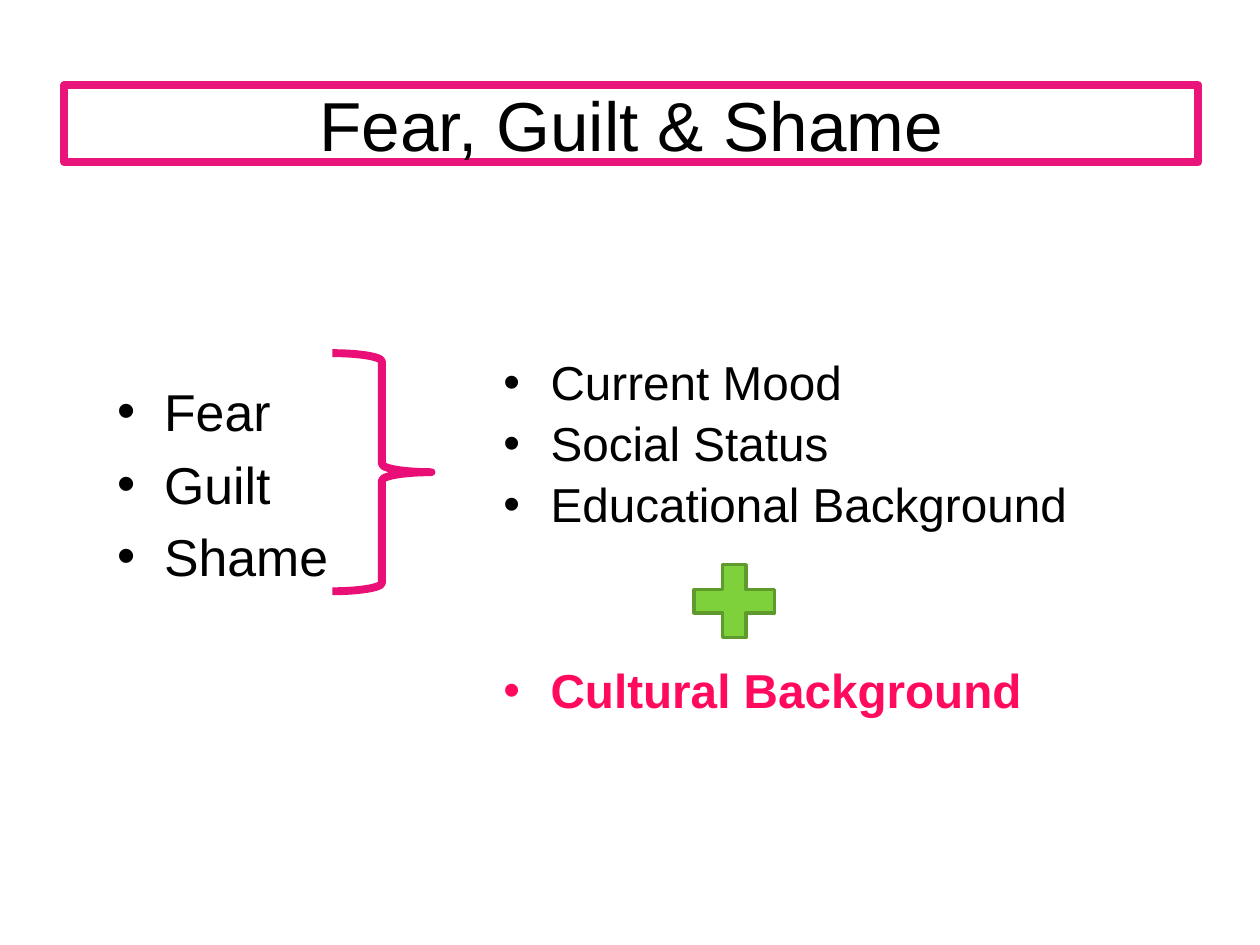
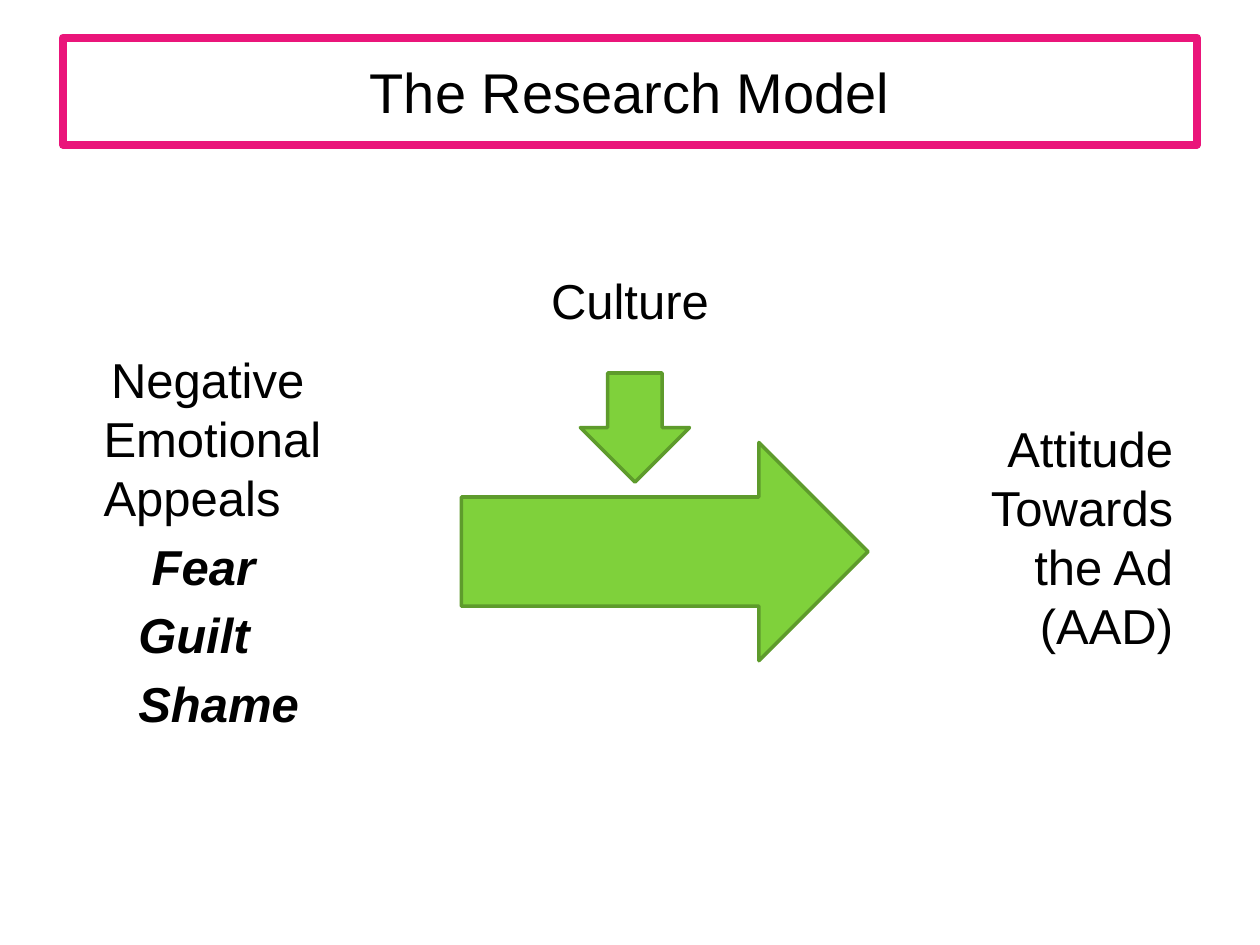
import pptx
import pptx.dml.color
import pptx.enum.shapes
import pptx.enum.text
import pptx.oxml.ns
import pptx.util
from lxml import etree

Cm = pptx.util.Cm
Pt = pptx.util.Pt
Shape = pptx.enum.shapes.MSO_SHAPE
Align = pptx.enum.text.PP_ALIGN
Anchor = pptx.enum.text.MSO_ANCHOR

COLORS = {
    "paper": "FFFFFF",
    "text": "000000",
    "frame": "EA157A",
    "brace": "EA0F77",
    "accent": "FF0A5E",
    "green": "7FD13B",
    "green_edge": "5E9B2C",
}
FONT = "Arial"
HANG = 0.95  # hanging indent of body text, in cm


def color(name):
    return pptx.dml.color.RGBColor.from_string(COLORS[name])


class Deck:
    """Holds the presentation, its style and the slide being filled."""

    def __init__(self):
        self.presentation = pptx.Presentation()
        self.presentation.slide_width = Cm(25.4)
        self.presentation.slide_height = Cm(19.05)
        self.slide = None

    def new_slide(self):
        self.slide = self.presentation.slides.add_slide(self.presentation.slide_layouts[6])

    def shape(self, kind, box, fill=None, line=None, line_width=2):
        """Add a preset shape; box is left, top, width, height in cm."""
        shape = self.slide.shapes.add_shape(kind, *map(Cm, box))
        shape.shadow.inherit = False
        if fill:
            shape.fill.solid()
            shape.fill.fore_color.rgb = color(fill)
        else:
            shape.fill.background()
        if line:
            shape.line.color.rgb = color(line)
            shape.line.width = Pt(line_width)
        else:
            shape.line.fill.background()
        return shape

    def green_shape(self, kind, box):
        return self.shape(kind, box, "green", "green_edge")

    def paragraph(self, paragraph, text, size, align=Align.LEFT, margin=0.0, indent=0.0,
                  bullet=False, line_spacing=1.0, **font_format):
        """Fill one paragraph; margin and first-line indent are in cm."""
        values = {"alignment": align, "line_spacing": line_spacing, "space_before": Pt(size * 0.2)}
        for name, value in values.items():
            setattr(paragraph, name, value)
        run = paragraph.add_run()
        run.text = text
        run.font.color.rgb = color(font_format.pop("ink", "text"))
        for name, value in {"name": FONT, "size": Pt(size), **font_format}.items():
            setattr(run.font, name, value)
        properties = paragraph._p.get_or_add_pPr()
        properties.set("marL", str(Cm(margin)))
        properties.set("indent", str(Cm(indent)))
        if bullet:
            for tag, name, value in (("a:buFont", "typeface", FONT), ("a:buChar", "char", "•")):
                etree.SubElement(properties, pptx.oxml.ns.qn(tag)).set(name, value)

    def fill_frame(self, frame, paragraphs, size, anchor=Anchor.TOP, **paragraph_format):
        """Write paragraphs, each a text with its own format."""
        frame.word_wrap = True
        frame.vertical_anchor = anchor
        for index, (text, own_format) in enumerate(paragraphs):
            paragraph = frame.add_paragraph() if index else frame.paragraphs[0]
            self.paragraph(paragraph, text, size, **{**paragraph_format, **own_format})

    def bullets(self, box, texts, size, **paragraph_format):
        frame = self.slide.shapes.add_textbox(*map(Cm, box)).text_frame
        self.fill_frame(frame, [(text, {}) for text in texts], size,
                        margin=HANG, indent=-HANG, bullet=True, **paragraph_format)

    def panel(self, box, paragraphs, size=28, **paragraph_format):
        """Add a white rectangle with text."""
        shape = self.shape(Shape.RECTANGLE, box, "paper")
        self.fill_frame(shape.text_frame, paragraphs, size, **paragraph_format)

    def title(self, text, left, top, height, size):
        shape = self.shape(Shape.RECTANGLE, (left, top, 22.86, height), "paper", "frame", 4.5)
        frame = shape.text_frame
        self.fill_frame(frame, [(text, {})], size, Anchor.MIDDLE, align=Align.CENTER)
        frame.paragraphs[0].space_before = Pt(0)


def build_appeals(deck):
    deck.new_slide()
    deck.title("Fear, Guilt & Shame", 1.3, 1.72, 1.55, 39.6)
    deck.bullets((2.11, 7.53, 5.84, 4.39), ["Fear", "Guilt", "Shame"], 29.6)
    background = {"size": 27.2, "line_spacing": 0.9}
    deck.bullets((9.9, 7.12, 12.19, 4.39),
                 ["Current Mood", "Social Status", "Educational Background"], **background)
    deck.bullets((9.9, 13.32, 11, 1.4), ["Cultural Background"],
                 ink="accent", bold=True, **background)
    deck.shape(Shape.RIGHT_BRACE, (6.7, 7.12, 2, 4.8), line="brace", line_width=4.5)
    deck.green_shape(Shape.MATH_PLUS, (13.7, 11.12, 2.21, 2))


def build_model(deck):
    deck.new_slide()
    deck.title("The Research Model", 1.27, 0.76, 2.16, 32)
    deck.panel((17.5, 8.32, 6.4, 5.79), [("Attitude Towards the Ad (AAD)", {})],
               align=Align.RIGHT, margin=HANG, indent=-HANG)
    deck.panel((10.7, 5.33, 4, 1.6), [("Culture", {})], align=Align.CENTER)
    emphasis = {"bold": True, "italic": True}
    deck.panel((0.89, 6.93, 7.39, 8.61), [
        ("Negative Emotional Appeals", {"indent": 0.15}),
        ("Fear", {"indent": 0.97, **emphasis}),
        ("Guilt", {"indent": 0.7, **emphasis}),
        ("Shame", {"indent": 0.7, **emphasis}),
    ], margin=HANG)
    deck.green_shape(Shape.RIGHT_ARROW, (9.3, 8.92, 8.2, 4.4))
    deck.green_shape(Shape.DOWN_ARROW, (11.7, 7.52, 2.2, 2.2))


def main():
    deck = Deck()
    build_appeals(deck)
    build_model(deck)
    deck.presentation.save("out.pptx")


if __name__ == "__main__":
    main()
